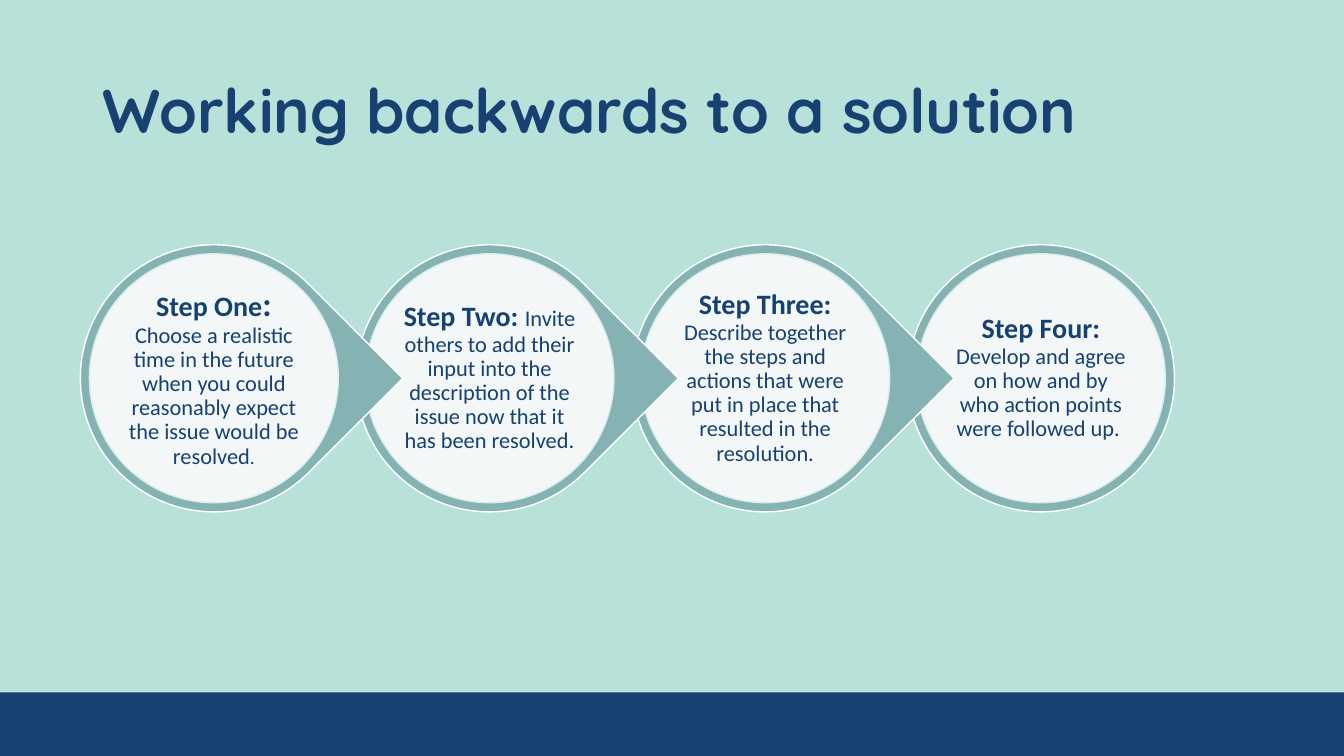
from dataclasses import dataclass

from lxml import etree
from pptx import Presentation
from pptx.dml.color import RGBColor
from pptx.enum.shapes import MSO_SHAPE
from pptx.enum.text import MSO_ANCHOR, PP_ALIGN
from pptx.oxml.ns import qn
from pptx.util import Pt

RECT, OVAL, TEAR = MSO_SHAPE.RECTANGLE, MSO_SHAPE.OVAL, MSO_SHAPE.TEAR
MIDDLE = MSO_ANCHOR.MIDDLE
LEFT, CENTER = PP_ALIGN.LEFT, PP_ALIGN.CENTER


@dataclass(frozen=True)
class Theme:
    mint: str = "B8E1DA"
    navy: str = "164170"
    teal: str = "85B3B3"
    white: str = "FFFFFF"
    pale: str = "DAEEEC"
    head: str = "Quicksand"
    body: str = "Calibri"
    title: int = 44
    colon: int = 24
    label: int = 20
    text: int = 16
    stop: int = 14


class Board:
    def __init__(self, slide, theme):
        self.slide, self.theme = slide, theme
        fill = slide.background.fill
        fill.solid()
        fill.fore_color.rgb = RGBColor.from_string(theme.mint)

    def shape(self, kind, box, color, line=None, alpha=None, turn=0):
        item = self.slide.shapes.add_shape(kind, *map(Pt, box))
        item.shadow.inherit = False
        item.rotation = turn
        item.fill.solid()
        item.fill.fore_color.rgb = RGBColor.from_string(color)
        if alpha is not None:
            tint = item.fill._xPr.find(qn("a:solidFill"))[0]
            etree.SubElement(tint, qn("a:alpha")).set("val", str(alpha * 1000))
        if line:
            item.line.color.rgb = RGBColor.from_string(line)
            item.line.width = Pt(1)
        else:
            item.line.fill.background()

    def text(self, box, parts, font, align=LEFT, pad=None):
        """Each part is (words, size, bold)."""
        frame = self.slide.shapes.add_textbox(*map(Pt, box)).text_frame
        frame.word_wrap = True
        frame.vertical_anchor = MIDDLE
        if pad is not None:
            frame.margin_left = frame.margin_right = Pt(pad)
            frame.margin_top = frame.margin_bottom = Pt(pad)
        para = frame.paragraphs[0]
        para.alignment = align
        para.line_spacing = 0.9
        for words, size, bold in parts:
            run = para.add_run()
            run.text = words
            run.font.name = font
            run.font.size = Pt(size)
            run.font.bold = bold
            run.font.color.rgb = RGBColor.from_string(self.theme.navy)

    def step(self, mid, kind, turn, parts):
        def around(size):
            return mid - size / 2, MID_Y - size / 2, size, size

        t = self.theme
        self.shape(kind, around(RING), t.teal, t.white, turn=turn)
        self.shape(OVAL, around(DISC), t.white, t.pale, alpha=90)
        self.text(around(LABEL), parts, t.body, CENTER, pad=2)


# Step geometry
RING, DISC, LABEL = 190.8, 177.8, 126.7
FIRST_X, MID_Y, PITCH = 152.8, 270.2, 196.9

t = Theme()
STEPS = [
    [("Step One", t.label, True), (": ", t.colon, True),
     ("Choose a realistic time in the future when you could reasonably "
      "expect the issue would be resolved", t.text, False),
     (".", t.stop, False)],
    [("Step Two: ", t.label, True),
     ("Invite others to add their input into the description of the issue "
      "now that it has been resolved.", t.text, False)],
    [("Step Three: ", t.label, True),
     ("Describe together the steps and actions that were put in place that "
      "resulted in the resolution.", t.text, False)],
    [("Step Four: ", t.label, True),
     ("Develop and agree on how and by who action points were followed up. ",
      t.text, False)],
]


def main():
    deck = Presentation()
    deck.slide_width, deck.slide_height = Pt(960), Pt(540)
    board = Board(deck.slides.add_slide(deck.slide_layouts[6]), t)

    # Footer band and title
    board.shape(RECT, (0, 494.6, 960, 45.4), t.navy)
    board.text((66, 28.8, 828, 104.4),
               [("Working backwards to a solution", t.title, True)], t.head)

    # Steps, last one first so each tip lies over the next ring
    last = len(STEPS) - 1
    for i in range(last, -1, -1):
        kind, turn = (OVAL, 0) if i == last else (TEAR, 45)
        board.step(FIRST_X + i * PITCH, kind, turn, STEPS[i])

    deck.save("out.pptx")


if __name__ == "__main__":
    main()
